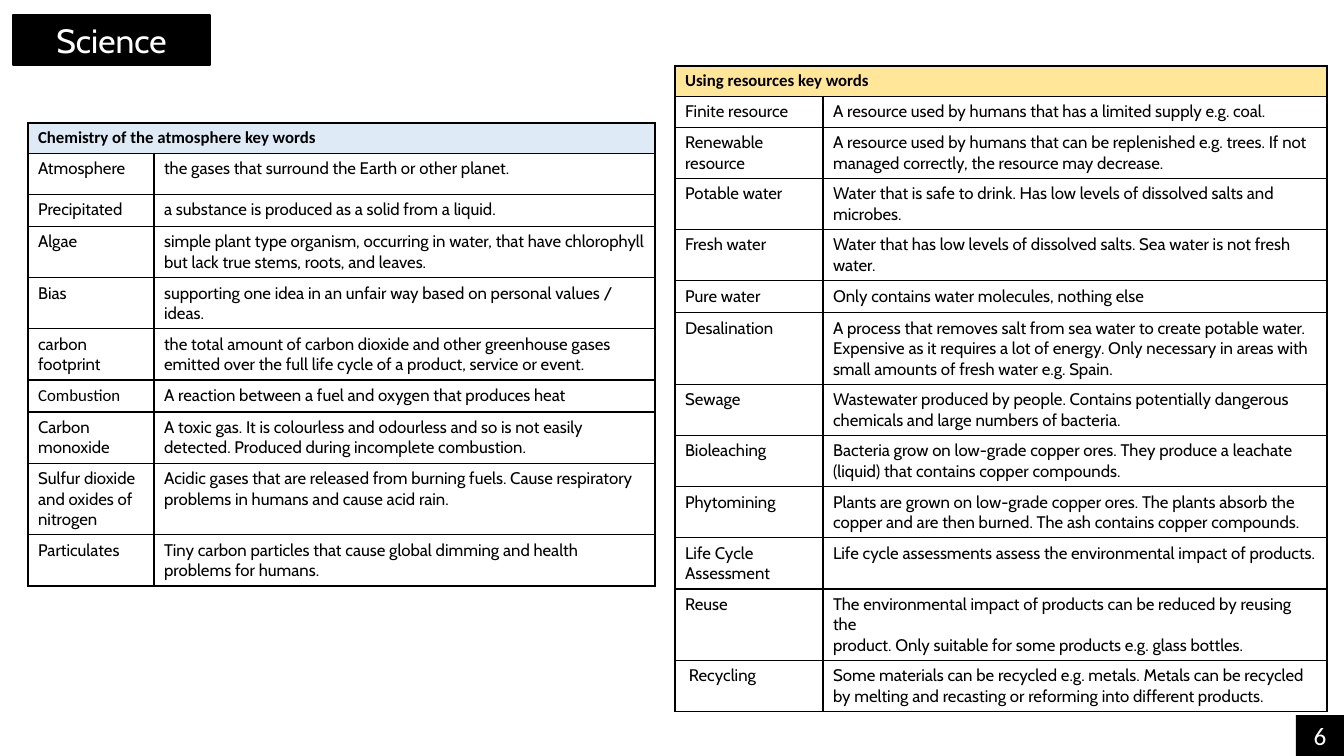
from lxml.etree import SubElement
from pptx import Presentation
from pptx.dml.color import RGBColor
from pptx.enum.shapes import MSO_SHAPE as Shape
from pptx.enum.text import MSO_ANCHOR as Anchor, MSO_AUTO_SIZE as AutoSize, PP_ALIGN as Align
from pptx.oxml.ns import qn
from pptx.util import Emu, Pt

BODY_FONT, HEADING_FONT = "Cabin", "Calibri"
BLACK, WHITE = "000000", "FFFFFF"
SUBJECT, PAGE = "Science", "6"

# Each row: term, meaning, minimum height in px
ATMOSPHERE = {
    "heading": "Chemistry of the atmosphere key words",
    "tint": "DEEBF7",
    "corner": (28, 123),
    "columns": (126, 501),
    "rows": [
        ("Atmosphere", "the gases that surround the Earth or other planet.", 41),
        ("Precipitated", "a substance is produced as a solid from a liquid.", 32),
        ("Algae", "simple plant type organism, occurring in water, that have chlorophyll "
         "but lack true stems, roots, and leaves.", 41),
        ("Bias", "supporting one idea in an unfair way based on personal values / ideas.", 41),
        ("carbon footprint", "the total amount of carbon dioxide and other greenhouse gases "
         "emitted over the full life cycle of a product, service or event.", 41),
        ("Combustion", "A reaction between a fuel and oxygen that produces heat", 32),
        ("Carbon monoxide", "A toxic gas. It is colourless and odourless and so is not easily "
         "detected. Produced during incomplete combustion.", 27),
        ("Sulfur dioxide and oxides of nitrogen", "Acidic gases that are released from burning "
         "fuels. Cause respiratory problems in humans and cause acid rain.", 30),
        ("Particulates", "Tiny carbon particles that cause global dimming and health "
         "problems for humans.", 34),
    ],
}
RESOURCES = {
    "heading": "Using resources key words",
    "tint": "FFE699",
    "corner": (675, 66),
    "columns": (148, 504),
    "rows": [
        ("Finite resource", "A resource used by humans that has a limited supply e.g. coal.", 28),
        ("Renewable\nresource", "A resource used by humans that can be replenished e.g. trees. "
         "If not managed correctly, the resource may decrease.", 32),
        ("Potable water", "Water that is safe to drink. Has low levels of dissolved salts "
         "and microbes.", 41),
        ("Fresh water", "Water that has low levels of dissolved salts. Sea water is not "
         "fresh water.", 36),
        ("Pure water", "Only contains water molecules, nothing else", 32),
        ("Desalination", "A process that removes salt from sea water to create potable water. "
         "Expensive as it requires a lot of energy. Only necessary in areas with small amounts "
         "of fresh water e.g. Spain.", 27),
        ("Sewage", "Wastewater produced by people. Contains potentially dangerous chemicals "
         "and large numbers of bacteria.", 30),
        ("Bioleaching", "Bacteria grow on low-grade copper ores. They produce a leachate "
         "(liquid) that contains copper compounds.", 41),
        ("Phytomining", "Plants are grown on low-grade copper ores. The plants absorb the "
         "copper and are then burned. The ash contains copper compounds.", 41),
        ("Life Cycle\nAssessment", "Life cycle assessments assess the environmental impact "
         "of products.", 41),
        ("Reuse", "The environmental impact of products can be reduced by reusing the\n"
         "product. Only suitable for some products e.g. glass bottles.", 41),
        (" Recycling", "Some materials can be recycled e.g. metals. Metals can be recycled by "
         "melting and recasting or reforming into different products.", 41),
    ],
}
HEADING_HEIGHT = 24
CALIBRI_TERMS = {"Combustion"}


def px(length):
    return Emu(round(length * 914400 / 100.8))


def colour(hex_string):
    return RGBColor.from_string(hex_string)


def write(frame, text, size, font, ink=BLACK, bold=False, align=Align.LEFT):
    frame.text = text
    for paragraph in frame.paragraphs:
        paragraph.alignment = align
        paragraph.line_spacing = 1.0
        paragraph.font.size = Pt(size)
        paragraph.font.name = font
        paragraph.font.bold = bold
        paragraph.font.color.rgb = colour(ink)


def fill_label(label, text, size, font):
    """Turn a shape into a black label of fixed size with centred white text."""
    label.fill.solid()
    label.fill.fore_color.rgb = colour(BLACK)
    frame = label.text_frame
    frame.word_wrap = True
    frame.auto_size = AutoSize.NONE
    frame.vertical_anchor = Anchor.MIDDLE
    write(frame, text, size, font, WHITE, align=Align.CENTER)


def add_borders(cell):
    properties = cell._tc.get_or_add_tcPr()
    for position, side in enumerate(("lnL", "lnR", "lnT", "lnB")):
        border = properties.makeelement(qn(f"a:{side}"), {"w": str(Pt(1))})
        properties.insert(position, border)
        fill = SubElement(border, qn("a:solidFill"))
        SubElement(fill, qn("a:srgbClr"), val=BLACK)


def add_glossary(slide, glossary):
    rows, columns = glossary["rows"], glossary["columns"]
    heights = [HEADING_HEIGHT] + [height for _, _, height in rows]
    left, top = glossary["corner"]
    table = slide.shapes.add_table(len(heights), len(columns), px(left), px(top),
                                   px(sum(columns)), px(sum(heights))).table
    table.first_row = table.horz_banding = False
    for column, width in zip(table.columns, columns):
        column.width = px(width)
    for row, height in zip(table.rows, heights):
        row.height = px(height)
    for cell in table.iter_cells():
        cell.fill.background()
        add_borders(cell)

    heading = table.cell(0, 0)
    heading.merge(table.cell(0, 1))
    heading.fill.solid()
    heading.fill.fore_color.rgb = colour(glossary["tint"])
    write(heading.text_frame, glossary["heading"], 12, HEADING_FONT, bold=True)
    for number, (term, meaning, _) in enumerate(rows, start=1):
        term_font = HEADING_FONT if term in CALIBRI_TERMS else BODY_FONT
        write(table.cell(number, 0).text_frame, term, 12, term_font)
        write(table.cell(number, 1).text_frame, meaning, 12, BODY_FONT)


def main():
    deck = Presentation()
    deck.slide_width, deck.slide_height = px(1344), px(756)
    slide = deck.slides.add_slide(deck.slide_layouts[5])

    subject = slide.shapes.title
    subject.left, subject.top, subject.width, subject.height = map(px, (13, 15, 197, 50))
    fill_label(subject, SUBJECT, 24, BODY_FONT)
    subject.line.color.rgb = colour(BLACK)
    subject.line.width = Pt(1)

    page = slide.shapes.add_shape(Shape.RECTANGLE, *map(px, (1296, 715, 48, 41)))
    page.shadow.inherit = False
    page.line.fill.background()
    fill_label(page, PAGE, 18, HEADING_FONT)

    for glossary in (ATMOSPHERE, RESOURCES):
        add_glossary(slide, glossary)
    deck.save("out.pptx")


if __name__ == "__main__":
    main()
